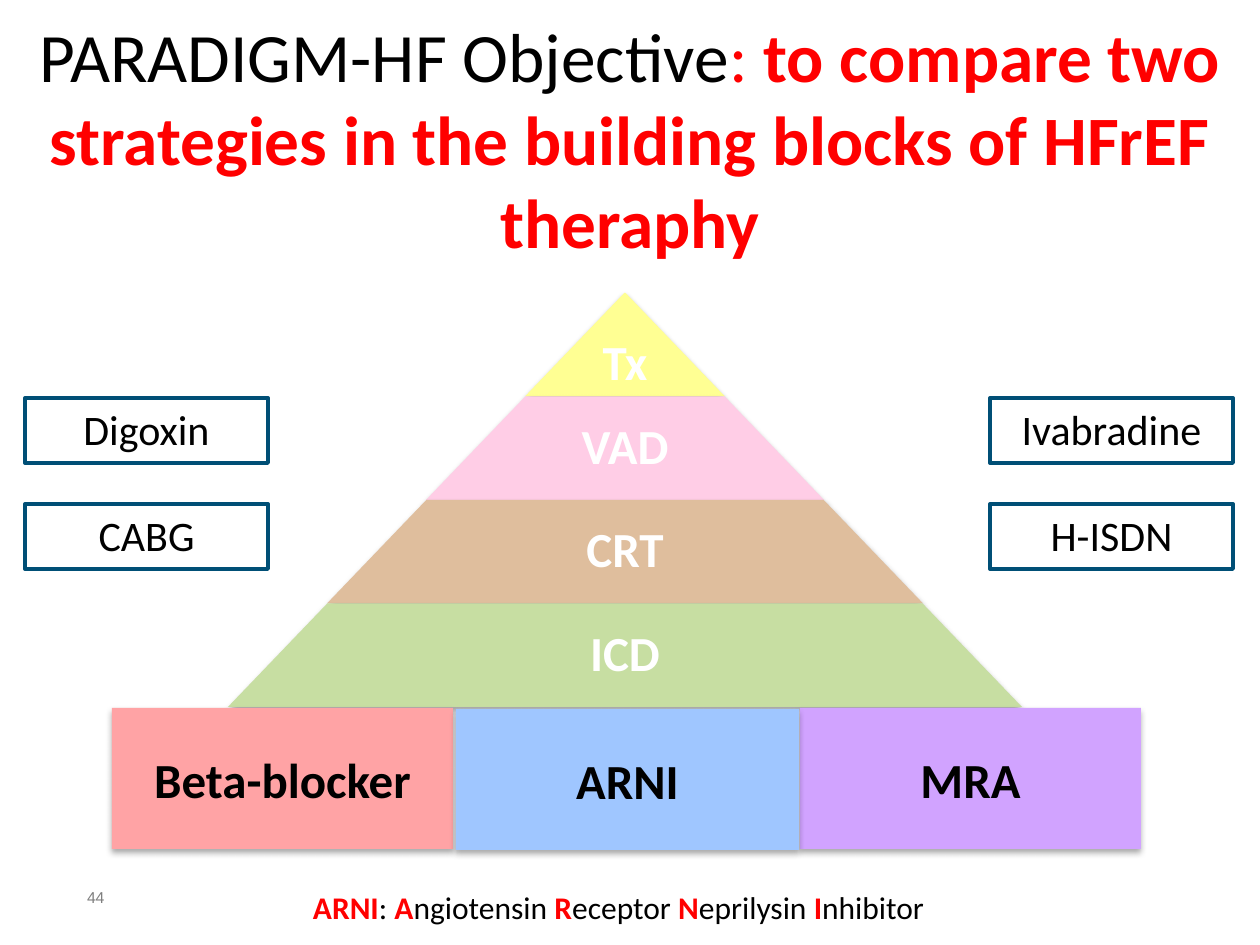
from lxml import etree
from pptx import Presentation
from pptx import util as u
from pptx.dml.color import RGBColor
from pptx.enum import shapes, text
from pptx.oxml.ns import qn

EMU_PER_PX = 914400 / 126
COLORS = {
    "white": "FFFFFF", "black": "000000", "red": "FF0000", "grey": "7F7F7F",
    "border": "004F76", "yellow": "FFFF93", "pink": "FFCDE6", "tan": "DFBE9D",
    "green": "C7DEA2", "salmon": "FFA3A5", "blue": "9FC6FF", "violet": "D1A3FF",
}
CENTER, MIDDLE = text.PP_ALIGN.CENTER, text.MSO_ANCHOR.MIDDLE
TOP, BOTTOM = text.MSO_ANCHOR.TOP, text.MSO_ANCHOR.BOTTOM


def px(value):
    return u.Emu(round(value * EMU_PER_PX))


def rgb(name):
    return RGBColor.from_string(COLORS[name])


def write(shape, runs, size, align=CENTER, anchor=TOP, insets=(13, 6), font="Calibri"):
    """Fill a shape with one paragraph of (words, color, bold) runs."""
    frame = shape.text_frame
    frame.word_wrap = True
    frame.vertical_anchor = anchor
    frame.margin_left = frame.margin_right = px(insets[0])
    frame.margin_top = frame.margin_bottom = px(insets[1])
    paragraph = frame.paragraphs[0]
    paragraph.alignment = align
    for words, color, bold in runs:
        run = paragraph.add_run()
        run.text = words
        run.font.name = font
        run.font.size = u.Pt(size)
        run.font.bold = bold
        run.font.color.rgb = rgb(color)
    return paragraph


def add_text(slide, box, runs, size, **options):
    shape = slide.shapes.add_textbox(*map(px, box))
    return write(shape, runs, size, **options)


def add_block(slide, kind, box, fill, border=None):
    shape = slide.shapes.add_shape(kind, *map(px, box))
    shape.shadow.inherit = False
    shape.fill.solid()
    shape.fill.fore_color.rgb = rgb(fill)
    if border:
        shape.line.color.rgb = rgb(border)
        shape.line.width = u.Pt(2.25)
    else:
        shape.line.fill.background()
    return shape


def add_shadow(shape, blur, distance, opacity):
    """Drop a soft black shadow straight down; blur and distance in points."""
    effects = shape._element.spPr.find(qn("a:effectLst"))
    shadow = etree.SubElement(
        effects, qn("a:outerShdw"), blurRad=str(u.Pt(blur)),
        dist=str(u.Pt(distance)), dir="5400000", rotWithShape="0")
    color = etree.SubElement(shadow, qn("a:srgbClr"), val=COLORS["black"])
    etree.SubElement(color, qn("a:alpha"), val=str(opacity * 1000))


def add_tier(slide, level, label, fill):
    """Add one level of the pyramid, counted from the tip."""
    height, slope = 103.5, 99
    width = 2 * slope * level + 2
    box = (625 - width / 2, 293 + height * (level - 1), width, height)
    tier = add_block(slide, shapes.MSO_SHAPE.TRAPEZOID, box, fill)
    tier.adjustments[0] = 0.96
    add_shadow(tier, 3.1, 1.8, 35)
    paragraph = add_text(slide, box, [(label, "white", True)], 28, insets=(5, 5),
                         anchor=BOTTOM if level == 1 else MIDDLE)
    paragraph.line_spacing = 0.9


def add_foundation(slide, box, label, fill):
    block = add_block(slide, shapes.MSO_SHAPE.RECTANGLE, box, fill)
    add_shadow(block, 3.5, 2.2, 32)
    write(block, [(label, "black", True)], 28, anchor=MIDDLE, insets=(10, 5))


def add_option(slide, left, top, label):
    box = add_block(slide, shapes.MSO_SHAPE.RECTANGLE, (left, top, 243, 65),
                    "white", "border")
    write(box, [(label, "black", False)], 24)


def main():
    presentation = Presentation()
    presentation.slide_width, presentation.slide_height = px(1260), px(945)
    slide = presentation.slides.add_slide(presentation.slide_layouts[6])
    slide.background.fill.solid()
    slide.background.fill.fore_color.rgb = rgb("white")

    # Title
    add_text(slide, (0, 16, 1260, 243), [
        ("PARADIGM-HF Objective", "black", False),
        (": ", "red", False),
        ("to compare two strategies in the building blocks of HFrEF theraphy",
         "red", True),
    ], 39.6, anchor=MIDDLE)

    # Pyramid of devices
    tiers = [("Tx", "yellow"), ("VAD", "pink"), ("CRT", "tan"), ("ICD", "green")]
    for level, (label, fill) in enumerate(tiers, start=1):
        add_tier(slide, level, label, fill)

    # Drug classes under the pyramid
    add_foundation(slide, (112, 708, 341, 141), "Beta-blocker", "salmon")
    add_foundation(slide, (800, 708, 341, 141), "MRA", "violet")
    add_foundation(slide, (456, 709, 343, 141), "ARNI", "blue")

    # Other options on both sides
    columns = [(25, ("Digoxin", "CABG")), (990, ("Ivabradine", "H-ISDN"))]
    for left, labels in columns:
        for row, label in enumerate(labels):
            add_option(slide, left, 398 + 106 * row, label)

    # Slide number and abbreviation
    add_text(slide, (74, 882, 55, 34), [("44", "grey", False)], 9,
             align=text.PP_ALIGN.LEFT, font="Arial")
    abbreviation = [("ARNI", "red", True), (": ", "black", False)]
    for word in ("Angiotensin ", "Receptor ", "Neprilysin ", "Inhibitor"):
        abbreviation += [(word[0], "red", True), (word[1:], "black", False)]
    add_text(slide, (300, 882, 717, 50), abbreviation, 18,
             align=text.PP_ALIGN.LEFT)

    presentation.save("out.pptx")


if __name__ == "__main__":
    main()
